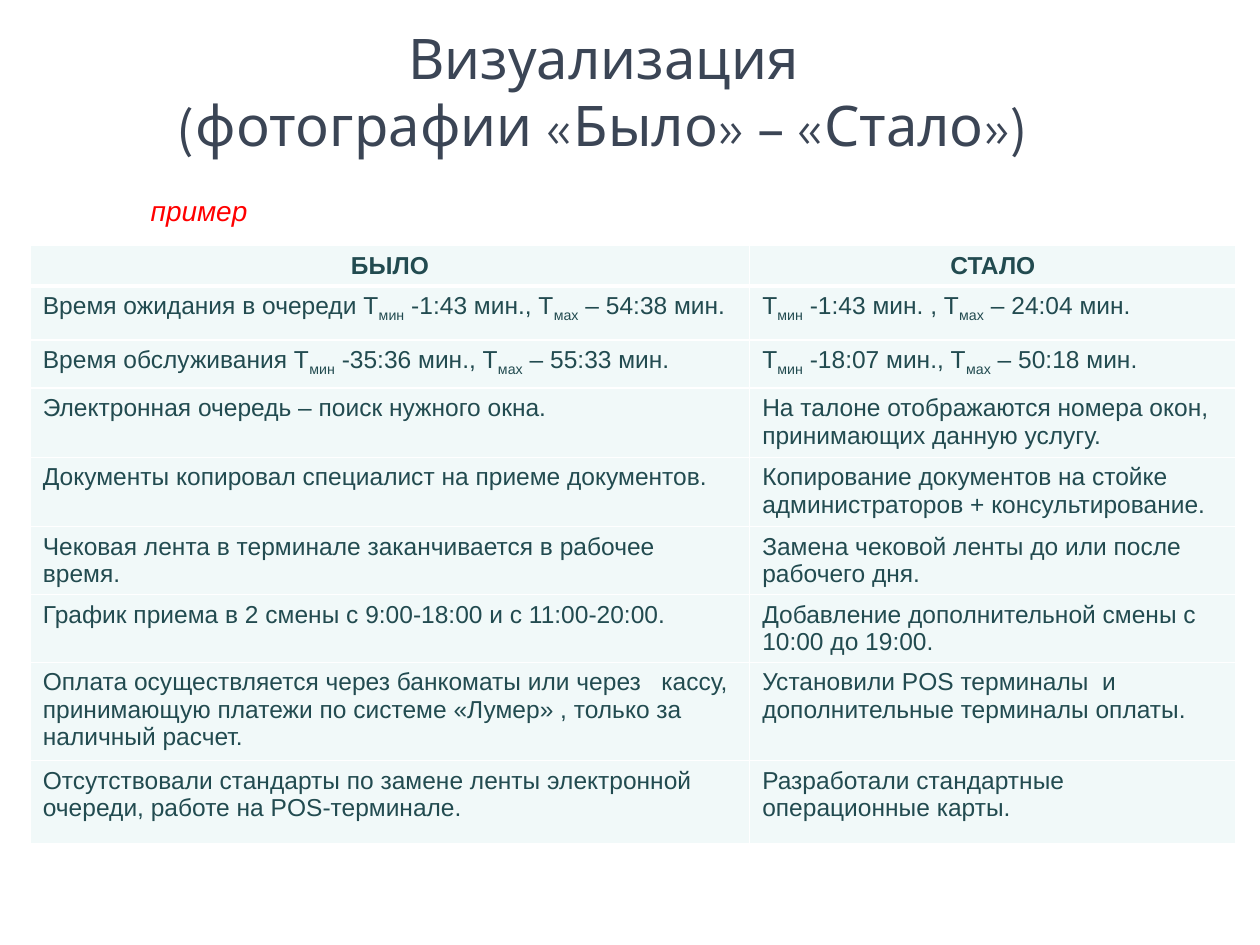
from lxml import etree
from pptx import Presentation
from pptx.dml.color import RGBColor
from pptx.enum.text import MSO_ANCHOR, PP_ALIGN
from pptx.oxml.ns import qn
from pptx.util import Inches, Pt

LEFT, MID = PP_ALIGN.LEFT, PP_ALIGN.CENTER
CENTER = MSO_ANCHOR.MIDDLE

TITLE = dict(name="League Spartan", size=Pt(32), color="3B4555", bold=False)
NOTE = dict(name="Arial", size=Pt(16), color="FF0000", italic=True)
HEAD = dict(name="Arial", size=Pt(14), color="224B50", bold=True)
BODY = {**HEAD, "bold": False}
FILL, EDGE = "F1F9F9", "FFFFFF"

COLS = [5.71, 3.86]
# Row height, before, after; parts between bars are subscripts
ROWS = [
    (0.32, "БЫЛО", "СТАЛО"),
    (0.43, "Время ожидания в очереди Т|мин| -1:43 мин., Т|мах| – 54:38 мин.",
     "Т|мин| -1:43 мин. , Т|мах| – 24:04 мин."),
    (0.38, "Время обслуживания Т|мин| -35:36 мин., Т|мах| – 55:33 мин.",
     "Т|мин| -18:07 мин., Т|мах| – 50:18 мин."),
    (0.55, "Электронная очередь – поиск нужного окна.",
     "На талоне отображаются номера окон, принимающих данную услугу."),
    (0.55, "Документы копировал специалист на приеме документов.",
     "Копирование документов на стойке администраторов + консультирование."),
    (0.54, "Чековая лента в терминале заканчивается в рабочее время.",
     "Замена чековой ленты до или после рабочего дня."),
    (0.53, "График приема в 2 смены с 9:00-18:00 и с 11:00-20:00.",
     "Добавление дополнительной смены с 10:00 до 19:00."),
    (0.78, "Оплата осуществляется через банкоматы или через   кассу, "
     "принимающую платежи по системе «Лумер» , только за наличный расчет.",
     "Установили POS терминалы  и дополнительные терминалы оплаты."),
    (0.66, "Отсутствовали стандарты по замене ленты электронной очереди, "
     "работе на POS-терминале.",
     "Разработали стандартные операционные карты."),
]


def paint(code):
    return RGBColor.from_string(code)


def style(font, look):
    for key, val in look.items():
        if key == "color":
            font.color.rgb = paint(val)
        else:
            setattr(font, key, val)


def write(para, text, look, align):
    para.alignment = align
    for i, part in enumerate(text.split("|")):
        run = para.add_run()
        run.text = part
        style(run.font, look)
        if i % 2:
            run.font._element.set("baseline", "-25000")


def edge(cell, side, width):
    line = etree.SubElement(cell._tc.get_or_add_tcPr(), qn("a:ln" + side),
                            w=str(Pt(width)))
    fill = etree.SubElement(line, qn("a:solidFill"))
    etree.SubElement(fill, qn("a:srgbClr"), val=EDGE)


def add_title(slide, box):
    title = slide.shapes.title
    title.left, title.top, title.width, title.height = map(Inches, box)
    frame = title.text_frame
    frame.word_wrap = False
    frame.vertical_anchor = CENTER
    para = frame.paragraphs[0]
    para.text = "Визуализация \v(фотографии «Было» – «Стало») "
    para.alignment = MID
    for run in para.runs:
        style(run.font, TITLE)


def add_note(slide, box):
    frame = slide.shapes.add_textbox(*map(Inches, box)).text_frame
    frame.word_wrap = True
    write(frame.paragraphs[0], "пример", NOTE, MID)


def add_grid(slide, left, top):
    high = sum(row[0] for row in ROWS)
    box = map(Inches, (left, top, sum(COLS), high))
    table = slide.shapes.add_table(len(ROWS), len(COLS), *box).table
    for col, wide in zip(table.columns, COLS):
        col.width = Inches(wide)
    for r, (tall, *texts) in enumerate(ROWS):
        table.rows[r].height = Inches(tall)
        look, align = (BODY, LEFT) if r else (HEAD, MID)
        for c, text in enumerate(texts):
            cell = table.cell(r, c)
            for side in "LRTB":
                thick = (side == "B" and r == 0) or (side == "T" and r == 1)
                edge(cell, side, 3 if thick else 1)
            cell.fill.solid()
            cell.fill.fore_color.rgb = paint(FILL)
            write(cell.text_frame.paragraphs[0], text, look, align)


def main():
    deck = Presentation()
    deck.slide_width, deck.slide_height = Inches(10), Inches(7.5)
    slide = deck.slides.add_slide(deck.slide_layouts[5])
    add_title(slide, (1.22, 0.13, 7.25, 1.18))
    add_grid(slide, 0.24, 1.95)
    add_note(slide, (0.91, 1.49, 1.34, 0.37))
    deck.save("out.pptx")


if __name__ == "__main__":
    main()
